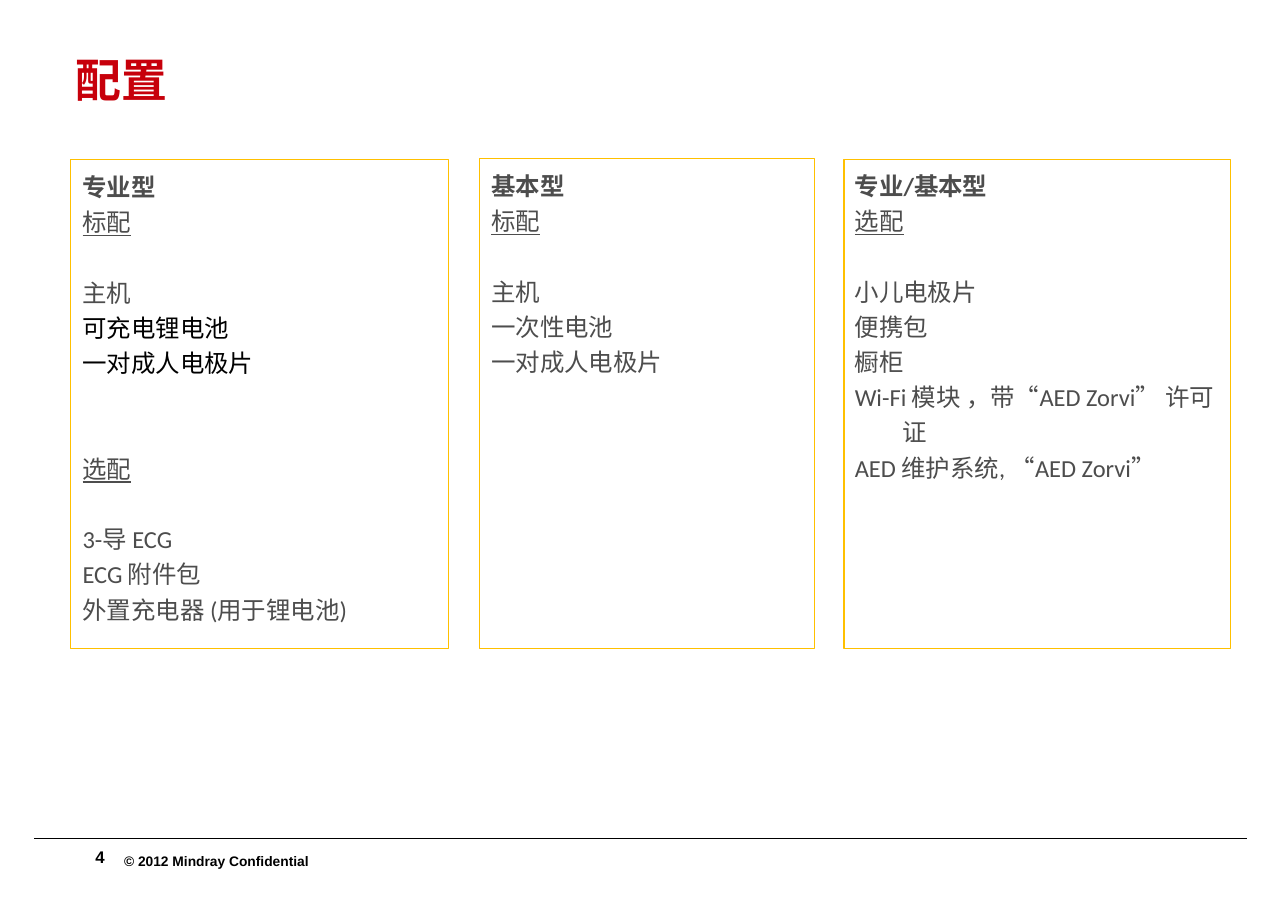
from pptx import Presentation
from pptx import util as u
from pptx.dml.color import RGBColor
from pptx.enum import shapes, text
from lxml import etree

RED = RGBColor(0xC7, 0x00, 0x0B)
GREY = RGBColor(0x4D, 0x4D, 0x4D)
BLACK = RGBColor(0x00, 0x00, 0x00)
GOLD = RGBColor(0xFF, 0xC0, 0x00)
ROW = 23  # points taken by one row of a list
HANG = u.Inches(0.43)


def add_text(box, words, size=16, font="Calibri", color=GREY, bold=False,
             underline=False, align=text.PP_ALIGN.LEFT, spacing=None,
             before=0, hang=0):
    frame = box.text_frame
    para = frame.add_paragraph() if frame.text else frame.paragraphs[0]
    para.alignment = align
    if spacing:
        para.line_spacing = spacing
    if before:
        para.space_before = u.Pt(before)
    if hang:
        properties = para._p.get_or_add_pPr()
        properties.set("marL", str(hang))
        properties.set("indent", str(-hang))
    span = para.add_run()
    span.text = words
    span.font.size = u.Pt(size)
    span.font.name = font
    span.font.bold = bold
    span.font.underline = underline
    span.font.color.rgb = color


def set_frame(box, across, down, anchor=text.MSO_ANCHOR.TOP):
    frame = box.text_frame
    frame.word_wrap = True
    frame.vertical_anchor = anchor
    frame.margin_left = frame.margin_right = u.Inches(across)
    frame.margin_top = frame.margin_bottom = u.Inches(down)


deck = Presentation()
deck.slide_width = u.Inches(11.69)
deck.slide_height = u.Inches(8.27)
page = deck.slides.add_slide(deck.slide_layouts[6])

# Footer: page number, copyright and rule
footer = [
    (0.97, 7.69, 1.93, 0.27, "© 2012 Mindray Confidential", 9),
    (0.33, 7.64, 0.72, 0.37, "4", 11),
]
for left, top, width, height, words, size in footer:
    box = page.shapes.add_textbox(u.Inches(left), u.Inches(top),
                                  u.Inches(width), u.Inches(height))
    set_frame(box, 0.1, 0.05)
    add_text(box, words, size=size, font="Arial", color=BLACK, bold=True,
             align=text.PP_ALIGN.RIGHT)

rule = page.shapes.add_connector(shapes.MSO_CONNECTOR.STRAIGHT, u.Inches(0.31),
                                 u.Inches(7.61), u.Inches(11.32), u.Inches(7.61))
rule.line.color.rgb = BLACK
rule.line.width = u.Pt(0.5)
etree.SubElement(
    rule._element.spPr,
    "{http://schemas.openxmlformats.org/drawingml/2006/main}effectLst")

# Title
title = page.shapes.add_textbox(u.Inches(0.58), u.Inches(0.03),
                                u.Inches(10.52), u.Inches(1.38))
set_frame(title, 0.11, 0.06, text.MSO_ANCHOR.MIDDLE)
add_text(title, "配置", size=30, font="Arial", color=RED, bold=True)

# Configuration panels: heading, then lists of (label, rows above, items)
panels = [
    (4.35, 1.44, 3.04, 0.11, 0.06, "基本型", [
        ("标配", 0, ["主机", "一次性电池", "一对成人电极片"]),
    ]),
    (0.64, 1.45, 3.43, 0.11, 0.06, "专业型", [
        ("标配", 0, ["主机", "可充电锂电池", "一对成人电极片"]),
        ("选配", 2, ["3-导 ECG", "ECG 附件包", "外置充电器 (用于锂电池)"]),
    ]),
    (7.66, 1.45, 3.51, 0.1, 0.05, "专业/基本型", [
        ("选配", 0, ["小儿电极片", "便携包", "橱柜",
                   "Wi-Fi 模块 ，带“AED Zorvi” 许可证",
                   "AED 维护系统, “AED Zorvi”"]),
    ]),
]
bottom = 5.89
for left, top, width, across, down, heading, lists in panels:
    panel = page.shapes.add_shape(
        shapes.MSO_SHAPE.RECTANGLE, u.Inches(left), u.Inches(top),
        u.Inches(width), u.Inches(bottom - top))
    panel.shadow.inherit = False
    panel.fill.background()
    panel.line.color.rgb = GOLD
    panel.line.width = u.Pt(0.75)
    set_frame(panel, across, down)
    add_text(panel, heading, bold=True, spacing=1.2, hang=HANG)
    for label, rows_above, items in lists:
        add_text(panel, label, underline=True, spacing=1.2, hang=HANG,
                 before=rows_above * ROW)
        for index, item in enumerate(items):
            # The professional model's own battery and pads stand out in black
            stands_out = heading == "专业型" and label == "标配" and index > 0
            add_text(panel, item, color=BLACK if stands_out else GREY,
                     spacing=1.2, hang=HANG, before=0 if index else ROW)

deck.save("out.pptx")
